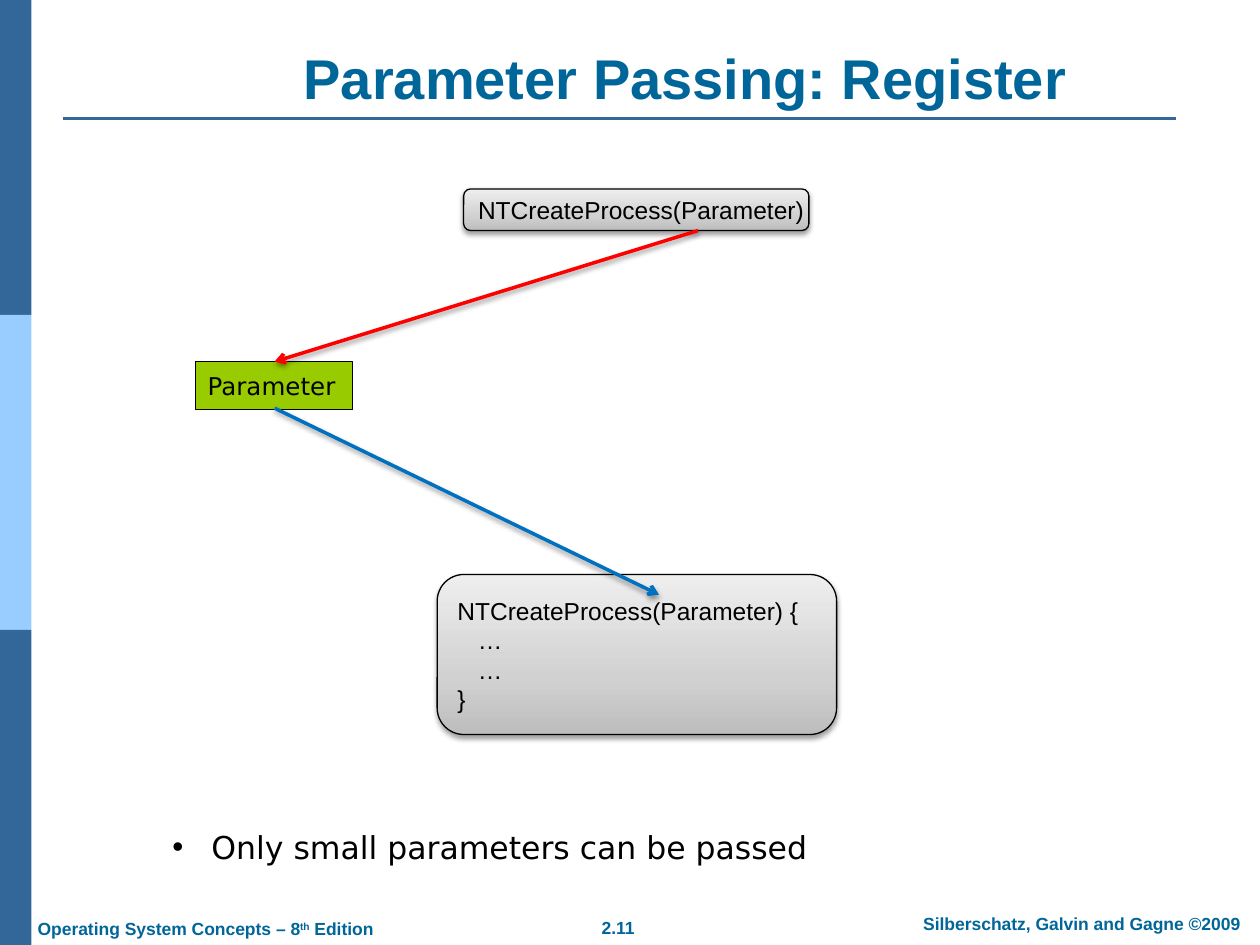
from dataclasses import dataclass
from typing import NamedTuple, Optional

from lxml import etree
from pptx import Presentation
from pptx.dml.color import RGBColor
from pptx.enum.shapes import MSO_CONNECTOR, MSO_SHAPE
from pptx.enum.text import MSO_ANCHOR, MSO_AUTO_SIZE, PP_ALIGN
from pptx.oxml import parse_xml
from pptx.oxml.ns import nsdecls, qn
from pptx.util import Emu, Pt

RECT, ROUNDED = MSO_SHAPE.RECTANGLE, MSO_SHAPE.ROUNDED_RECTANGLE
STRAIGHT = MSO_CONNECTOR.STRAIGHT
LEFT, CENTER = PP_ALIGN.LEFT, PP_ALIGN.CENTER
MIDDLE, BOTTOM = MSO_ANCHOR.MIDDLE, MSO_ANCHOR.BOTTOM
FIT_SHAPE, NO_FIT = MSO_AUTO_SIZE.SHAPE_TO_FIT_TEXT, MSO_AUTO_SIZE.NONE
TITLE_ONLY = 5
EMU_PER_PX = 9144  # 100 px to the inch


@dataclass(frozen=True)
class Theme:
    heading: str = "006699"
    band: str = "336699"
    band_light: str = "99CCFF"
    ink: str = "000000"
    register: str = "99CC00"
    store: str = "FF0000"
    load: str = "0070C0"
    gray_stops: tuple = ((0, "BDBDBD"), (35, "D1D1D1"), (100, "EEEEEE"))
    sans: str = "Arial"
    body: str = "DejaVu Sans"
    title_pt: int = 32
    bullet_pt: int = 18
    label_pt: int = 14
    footer_pt: int = 10


THEME = Theme()


class Box(NamedTuple):
    left: int
    top: int
    width: int
    height: int


class Block(NamedTuple):
    box: Box
    shape: int
    lines: tuple = ()
    font: str = THEME.sans
    fill: Optional[str] = None  # None means the gray gradient
    outlined: bool = True


class Line(NamedTuple):
    start: tuple
    end: tuple
    color: str
    weight: float
    is_arrow: bool = True


class Footer(NamedTuple):
    box: Box
    runs: tuple  # (text, baseline shift in percent)
    align: int = CENTER
    wraps: bool = False


BANDS = [
    Block(Box(0, 250 * row, 25, 250), RECT, fill=color, outlined=False)
    for row, color in enumerate((THEME.band, THEME.band_light, THEME.band))
]
TITLE_RULE = Line((50, 94), (933, 94), THEME.band, 1.5, is_arrow=False)
FOOTERS = [
    Footer(Box(466, 723, 49, 27), (("2.11", 0),)),
    Footer(Box(710, 720, 297, 27), (("Silberschatz, Galvin and Gagne ©2009", 0),), wraps=True),
    Footer(Box(20, 724, 289, 27),
           (("Operating System Concepts – 8", 0), ("th", 30), (" Edition", 0)), LEFT),
]
CALL_STEPS = [
    Block(Box(368, 150, 274, 33), ROUNDED, ("NTCreateProcess(Parameter)",)),
    Block(Box(347, 456, 317, 127), ROUNDED,
          ("NTCreateProcess(Parameter) {", "   …", "   …", "}")),
    Block(Box(155, 287, 125, 38), RECT, ("Parameter",), THEME.body, THEME.register),
]
PASSES = [
    Line((554, 183), (218, 287), THEME.store, 2),
    Line((218, 324), (523, 472), THEME.load, 2),
]


def px(*lengths: int) -> list:
    return [Emu(length * EMU_PER_PX) for length in lengths]


def format_font(font, name: str, size: int, color: str, bold: bool = False) -> None:
    for attribute, value in {"name": name, "size": Pt(size), "bold": bold}.items():
        setattr(font, attribute, value)
    font.color.rgb = RGBColor.from_string(color)


def format_frame(frame, **settings) -> None:
    for attribute, value in settings.items():
        setattr(frame, attribute, value)


def add_soft_shadow(effects) -> None:
    effects.append(parse_xml(
        f'<a:outerShdw {nsdecls("a")} blurRad="{Pt(3.1)}" dist="{Pt(1.6)}" dir="5400000"'
        ' rotWithShape="0"><a:srgbClr val="000000"><a:alpha val="38000"/></a:srgbClr>'
        '</a:outerShdw>'))


def fill_gray(shape) -> None:
    """Fill with the three-stop gradient, light at the top."""
    stops = "".join(f'<a:gs pos="{at * 1000}"><a:srgbClr val="{color}"/></a:gs>'
                    for at, color in THEME.gray_stops)
    gradient = parse_xml(f'<a:gradFill {nsdecls("a")} rotWithShape="1"><a:gsLst>{stops}</a:gsLst>'
                         '<a:lin ang="16200000" scaled="0"/></a:gradFill>')
    shape.fill.background()
    properties = shape.element.spPr
    properties.replace(properties.find(qn("a:noFill")), gradient)


def draw_block(slide, block: Block) -> None:
    shape = slide.shapes.add_shape(block.shape, *px(*block.box))
    shape.shadow.inherit = False
    if block.fill:
        shape.fill.solid()
        shape.fill.fore_color.rgb = RGBColor.from_string(block.fill)
    else:
        fill_gray(shape)
        add_soft_shadow(shape.element.spPr.find(qn("a:effectLst")))
    if block.outlined:
        shape.line.color.rgb = RGBColor.from_string(THEME.ink)
        shape.line.width = Pt(0.75)
    else:
        shape.line.fill.background()
    if not block.lines:
        return
    frame = shape.text_frame
    frame.text = "\n".join(block.lines)
    format_frame(frame, word_wrap=False, vertical_anchor=MIDDLE)
    for paragraph in frame.paragraphs:
        paragraph.alignment = LEFT
        format_font(paragraph.font, block.font, THEME.label_pt, THEME.ink)


def draw_line(slide, line: Line) -> None:
    connector = slide.shapes.add_connector(STRAIGHT, *px(*line.start, *line.end))
    connector.line.color.rgb = RGBColor.from_string(line.color)
    connector.line.width = Pt(line.weight)
    properties = connector.element.spPr
    effects = etree.SubElement(properties, qn("a:effectLst"))
    if line.is_arrow:
        etree.SubElement(properties.find(qn("a:ln")), qn("a:tailEnd"), type="arrow")
        add_soft_shadow(effects)


def draw_footer(slide, footer: Footer) -> None:
    frame = slide.shapes.add_textbox(*px(*footer.box)).text_frame
    format_frame(frame, word_wrap=footer.wraps, auto_size=FIT_SHAPE)
    paragraph = frame.paragraphs[0]
    paragraph.alignment = footer.align
    for text, shift in footer.runs:
        run = paragraph.add_run()
        run.text = text
        format_font(run.font, THEME.sans, THEME.footer_pt, THEME.heading, bold=True)
        if shift:
            run._r.get_or_add_rPr().set("baseline", str(shift * 1000))


def draw_title(slide, text: str, box: Box) -> None:
    title = slide.shapes.title
    title.left, title.top, title.width, title.height = px(*box)
    title.text_frame.text = text
    format_frame(title.text_frame, word_wrap=True, vertical_anchor=BOTTOM, auto_size=NO_FIT)
    paragraph = title.text_frame.paragraphs[0]
    paragraph.alignment = CENTER
    format_font(paragraph.runs[0].font, THEME.sans, THEME.title_pt, THEME.heading, bold=True)


def draw_bullet(slide, text: str, box: Box, indent: int) -> None:
    frame = slide.shapes.add_textbox(*px(*box)).text_frame
    format_frame(frame, word_wrap=False, auto_size=FIT_SHAPE)
    paragraph = frame.paragraphs[0]
    paragraph.text = text
    properties = paragraph._p.get_or_add_pPr()
    hang = px(indent)[0]
    properties.set("marL", str(hang))
    properties.set("indent", str(-hang))
    etree.SubElement(properties, qn("a:buFont"), typeface=THEME.sans)
    etree.SubElement(properties, qn("a:buChar"), char="•")
    format_font(paragraph.font, THEME.body, THEME.bullet_pt, THEME.ink)


def main() -> None:
    deck = Presentation()
    deck.slide_width, deck.slide_height = px(1000, 750)
    slide = deck.slides.add_slide(deck.slide_layouts[TITLE_ONLY])
    draw_title(slide, "Parameter Passing: Register", Box(94, 30, 900, 63))
    for block in BANDS + CALL_STEPS:
        draw_block(slide, block)
    for line in [TITLE_RULE] + PASSES:
        draw_line(slide, line)
    for footer in FOOTERS:
        draw_footer(slide, footer)
    draw_bullet(slide, "Only small parameters can be passed", Box(127, 652, 529, 40), 31)
    deck.save("out.pptx")


if __name__ == "__main__":
    main()
